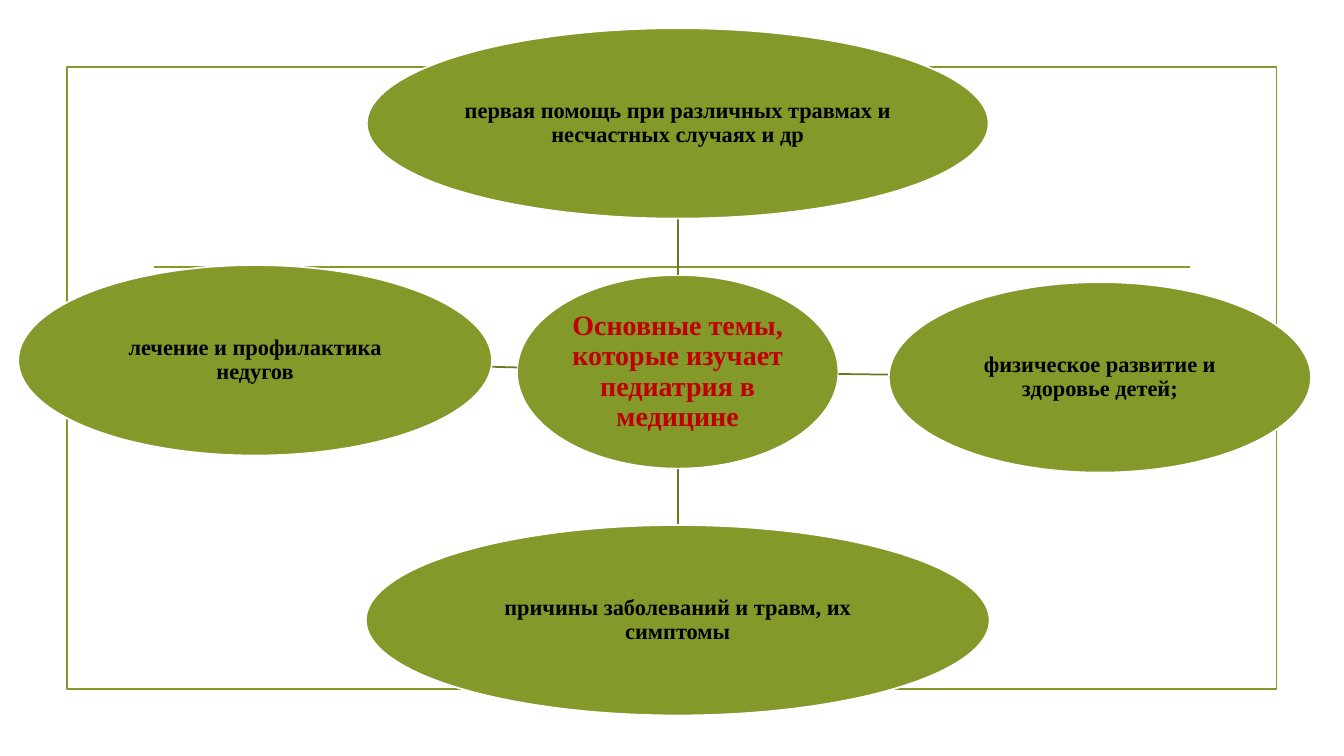
import math
from dataclasses import dataclass

import pptx
import pptx.dml.color
import pptx.enum.shapes
import pptx.enum.text
import pptx.util
from lxml import etree
from pptx.dml.color import RGBColor
from pptx.util import Cm

OLIVE = RGBColor(0x83, 0x99, 0x2A)
DARK_OLIVE = RGBColor(0x69, 0x7B, 0x22)
WHITE = RGBColor(0xFF, 0xFF, 0xFF)
BLACK = RGBColor(0x00, 0x00, 0x00)
RED = RGBColor(0xC0, 0x00, 0x00)
FONT = "Times New Roman"
LINE_WIDTH = pptx.util.Pt(1.25)
TOPIC_HEIGHT = 4.8
DRAWING_NS = "http://schemas.openxmlformats.org/drawingml/2006/main"


@dataclass(frozen=True)
class Bubble:
    """An ellipse given by its centre and size in centimetres."""
    text: str
    x: float
    y: float
    width: float
    height: float = TOPIC_HEIGHT


HUB = Bubble("Основные темы, которые изучает педиатрия в медицине",
             17.08, 9.37, 8.1, 4.88)
TOPICS = [
    Bubble("первая помощь при различных травмах и несчастных случаях и др",
           17.08, 3.11, 15.67),
    Bubble("физическое развитие и здоровье детей;", 27.72, 9.51, 10.64),
    Bubble("причины заболеваний и травм, их симптомы", 17.08, 15.63, 15.72),
    Bubble("лечение и профилактика недугов", 6.43, 9.08, 11.94),
]


def write_text(shape, text: str, *, size: float, color: RGBColor) -> None:
    frame = shape.text_frame
    frame.word_wrap = True
    frame.vertical_anchor = pptx.enum.text.MSO_ANCHOR.MIDDLE
    frame.margin_left = frame.margin_right = Cm(0.03)
    frame.margin_top = frame.margin_bottom = Cm(0.03)
    para = frame.paragraphs[0]
    para.alignment = pptx.enum.text.PP_ALIGN.CENTER
    para.line_spacing = 0.9
    span = para.add_run()
    span.text = text
    span.font.name = FONT
    span.font.size = pptx.util.Pt(size)
    span.font.bold = True
    span.font.color.rgb = color


def add_line(page, start: tuple[float, float], end: tuple[float, float],
             color: RGBColor) -> None:
    line = page.shapes.add_connector(
        pptx.enum.shapes.MSO_CONNECTOR.STRAIGHT,
        Cm(start[0]), Cm(start[1]), Cm(end[0]), Cm(end[1]))
    line.line.color.rgb = color
    line.line.width = LINE_WIDTH
    etree.SubElement(line._element.spPr, f"{{{DRAWING_NS}}}effectLst")


def add_frame(page) -> None:
    box = page.shapes.add_shape(
        pptx.enum.shapes.MSO_SHAPE.RECTANGLE,
        Cm(1.69), Cm(1.69), Cm(30.48), Cm(15.67))
    box.shadow.inherit = False
    box.fill.background()
    box.line.color.rgb = OLIVE
    box.line.width = LINE_WIDTH


def add_bubble(page, bubble: Bubble, *, size: float, color: RGBColor) -> None:
    ellipse = page.shapes.add_shape(
        pptx.enum.shapes.MSO_SHAPE.OVAL,
        Cm(bubble.x - bubble.width / 2), Cm(bubble.y - bubble.height / 2),
        Cm(bubble.width), Cm(bubble.height))
    ellipse.shadow.inherit = False
    ellipse.fill.solid()
    ellipse.fill.fore_color.rgb = OLIVE
    ellipse.line.color.rgb = WHITE
    ellipse.line.width = LINE_WIDTH
    write_text(ellipse, bubble.text, size=size, color=color)


def edge_towards(bubble: Bubble, target: Bubble) -> tuple[float, float]:
    """Return where the line between the two centres leaves the bubble."""
    dx, dy = target.x - bubble.x, target.y - bubble.y
    reach = math.hypot(2 * dx / bubble.width, 2 * dy / bubble.height)
    return bubble.x + dx / reach, bubble.y + dy / reach


def main() -> None:
    deck = pptx.Presentation()
    deck.slide_width, deck.slide_height = Cm(33.87), Cm(19.05)
    page = deck.slides.add_slide(deck.slide_layouts[6])
    add_frame(page)
    add_line(page, (3.89, 6.73), (30, 6.73), OLIVE)
    add_bubble(page, HUB, size=20, color=RED)
    for topic in TOPICS:
        add_line(page, edge_towards(HUB, topic), edge_towards(topic, HUB),
                 DARK_OLIVE)
        add_bubble(page, topic, size=16, color=BLACK)
    deck.save("out.pptx")


if __name__ == "__main__":
    main()
